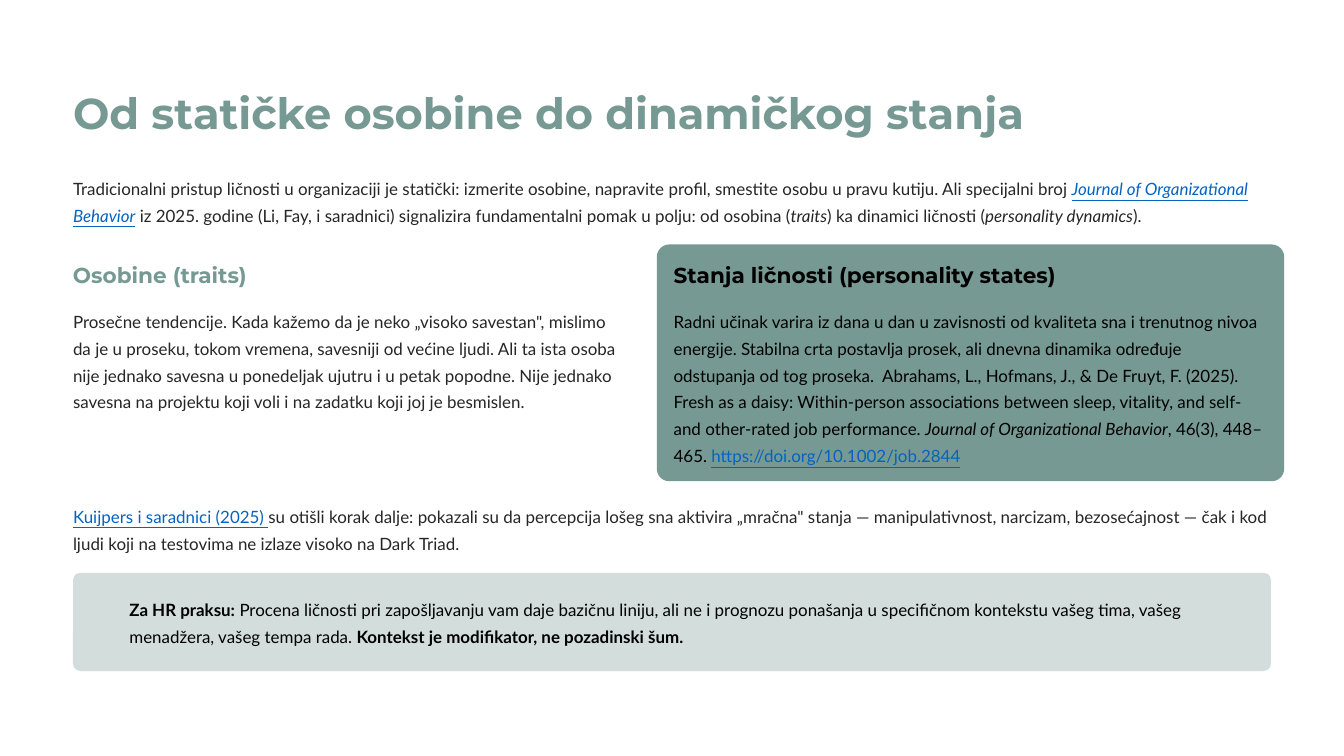
from pptx import Presentation
from pptx.dml.color import RGBColor
from pptx.enum.shapes import MSO_SHAPE
from pptx.enum.text import MSO_ANCHOR, MSO_AUTO_SIZE, PP_ALIGN
from pptx.util import Pt

SAGE = RGBColor(0x76, 0x99, 0x93)
PALE = RGBColor(0xD3, 0xDE, 0xDC)
INK = RGBColor(0x27, 0x25, 0x25)
BLACK = RGBColor(0, 0, 0)
LINK = RGBColor(0x05, 0x63, 0xC1)

# Content: runs are (text, style); styles are b bold, i italic, u link
TITLE = "Od statičke osobine do dinamičkog stanja"
INTRO = [
    ("Tradicionalni pristup ličnosti u organizaciji je statički: izmerite osobine, "
     "napravite profil, smestite osobu u pravu kutiju. Ali specijalni broj ", ""),
    ("Journal of Organizational Behavior", "iu"),
    (" iz 2025. godine (Li, Fay, i saradnici) signalizira fundamentalni pomak u polju: "
     "od osobina (", ""),
    ("traits", "i"),
    (") ka dinamici ličnosti (", ""),
    ("personality dynamics", "i"),
    (").", ""),
]
TRAITS_HEAD = "Osobine (traits)"
TRAITS = [
    ("Prosečne tendencije. Kada kažemo da je neko „visoko savestan\", mislimo da je u "
     "proseku, tokom vremena, savesniji od većine ljudi. Ali ta ista osoba nije jednako "
     "savesna u ponedeljak ujutru i u petak popodne. Nije jednako savesna na projektu "
     "koji voli i na zadatku koji joj je besmislen.", ""),
]
STATES_HEAD = "Stanja ličnosti (personality states)"
STATES = [
    ("Radni učinak varira iz dana u dan u zavisnosti od kvaliteta sna i trenutnog nivoa "
     "energije. Stabilna crta postavlja prosek, ali dnevna dinamika određuje odstupanja "
     "od tog proseka.  Abrahams, L., Hofmans, J., & De Fruyt, F. (2025). Fresh as a daisy: "
     "Within-person associations between sleep, vitality, and self- and other-rated job "
     "performance. ", ""),
    ("Journal of Organizational Behavior", "i"),
    (", 46(3), 448–465. ", ""),
    ("https://doi.org/10.1002/job.2844", "u"),
]
STUDY = [
    ("Kuijpers i saradnici (2025) ", "u"),
    ("su otišli korak dalje: pokazali su da percepcija lošeg sna aktivira „mračna\" stanja "
     "— manipulativnost, narcizam, bezosećajnost — čak i kod ljudi koji na testovima ne "
     "izlaze visoko na Dark Triad.", ""),
]
PRACTICE = [
    ("Za HR praksu:", "b"),
    (" Procena ličnosti pri zapošljavanju vam daje bazičnu liniju, ali ne i prognozu "
     "ponašanja u specifičnom kontekstu vašeg tima, vašeg menadžera, vašeg tempa rada. ", ""),
    ("Kontekst je modifikator, ne pozadinski šum.", "b"),
]

# Layout in points
LINE = 23
LEFT, FULL_W = 62.6, 1026.8
CARD_X, CARD_Y, PAD = 563, 209.5, 14.4
HEAD_Y = CARD_Y + PAD
BODY_Y = HEAD_Y + 37.6
STATES_X = CARD_X + PAD
NOTE_Y = 491

prs = Presentation()
prs.slide_width, prs.slide_height = Pt(1152), Pt(648)
s = prs.slides.add_slide(prs.slide_layouts[5])


def write(sp, runs, color, size=14.5, font="Lato", spacing=LINE, wrap=True):
    tf = sp.text_frame
    tf.margin_left = tf.margin_top = tf.margin_right = tf.margin_bottom = 0
    tf.auto_size = MSO_AUTO_SIZE.NONE
    tf.vertical_anchor = MSO_ANCHOR.TOP
    tf.word_wrap = wrap
    p = tf.paragraphs[0]
    p.alignment = PP_ALIGN.LEFT
    p.line_spacing = Pt(spacing)
    for text, style in runs:
        r = p.add_run()
        r.text = text
        r.font.name, r.font.size = font, Pt(size)
        r.font.bold, r.font.italic = "b" in style, "i" in style
        r.font.underline = "u" in style
        r.font.color.rgb = LINK if "u" in style else color


def textbox(x, y, w, lines):
    return s.shapes.add_textbox(Pt(x), Pt(y), Pt(w), Pt(lines * LINE))


def body(x, y, w, lines, runs, color=INK):
    write(textbox(x, y, w, lines), runs, color)


def heading(x, w, text, color):
    write(textbox(x, HEAD_Y, w, 1), [(text, "b")], color, 18.5, "Montserrat", wrap=False)


def card(x, y, w, h, fill, radius):
    sp = s.shapes.add_shape(MSO_SHAPE.ROUNDED_RECTANGLE, Pt(x), Pt(y), Pt(w), Pt(h))
    sp.adjustments[0] = radius / min(w, h)
    sp.shadow.inherit = False
    sp.fill.solid()
    sp.fill.fore_color.rgb = fill
    sp.line.fill.background()


# Title and introduction
title = s.shapes.title
title.left, title.top, title.width, title.height = Pt(LEFT), Pt(72.7), Pt(817), Pt(46)
write(title, [(TITLE, "b")], SAGE, 37, "Montserrat", 46, wrap=False)
body(LEFT, 147.6, FULL_W, 2, INTRO)

# Traits column
heading(LEFT, 186, TRAITS_HEAD, SAGE)
body(LEFT, BODY_Y, 473.8, 4, TRAITS)

# States card
card(CARD_X, CARD_Y, 537.8, 203, SAGE, 10.76)
heading(STATES_X, 328, STATES_HEAD, BLACK)
body(STATES_X, BODY_Y, 508.5, 6, STATES, BLACK)

# Follow-up study and practical note
body(LEFT, 428.4, FULL_W, 2, STUDY)
card(LEFT, NOTE_Y, FULL_W, 84.2, PALE, 6.23)
body(110.9, NOTE_Y + 17.3, 964, 2, PRACTICE, BLACK)

prs.save("out.pptx")
